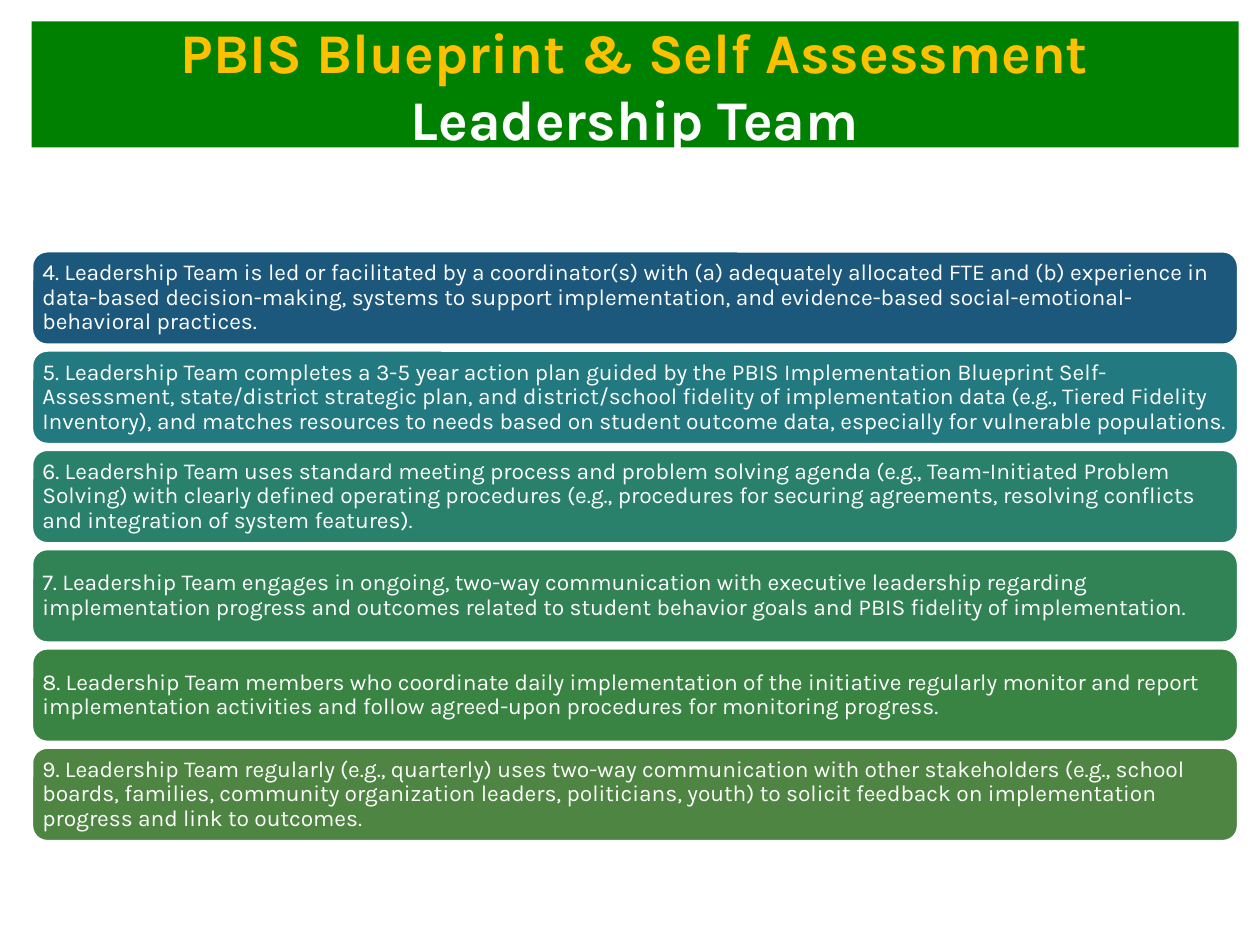
import pptx
import pptx.dml.color
import pptx.enum.shapes
import pptx.enum.text
import pptx.util

Inches, Pt = pptx.util.Inches, pptx.util.Pt
MIDDLE = pptx.enum.text.MSO_ANCHOR.MIDDLE
ALIGN = pptx.enum.text.PP_ALIGN

FONT = "Karla"
LEFT, WIDTH = 0.25, 9.58
FIRST_TOP, LAST_TOP, CARD_HEIGHT = 1.99, 5.93, 0.75

TITLE_LINES = [
    ("PBIS Blueprint & Self Assessment", "FFC000"),
    ("Leadership Team", "FFFFFF"),
]

CARDS = [
    ("1B587C", "4. Leadership Team is led or facilitated by a coordinator(s) with (a) adequately "
     "allocated FTE and (b) experience in data-based decision-making, systems to support "
     "implementation, and evidence-based social-emotional-behavioral practices."),
    ("22797F", "5. Leadership Team completes a 3-5 year action plan guided by the PBIS "
     "Implementation Blueprint Self-Assessment, state/district strategic plan, and "
     "district/school fidelity of implementation data (e.g., Tiered Fidelity Inventory), and "
     "matches resources to needs based on student outcome data, especially for vulnerable "
     "populations."),
    ("29816B", "6. Leadership Team uses standard meeting process and problem solving agenda "
     "(e.g., Team-Initiated Problem Solving) with clearly defined operating procedures (e.g., "
     "procedures for securing agreements, resolving conflicts and integration of system "
     "features)."),
    ("318355", "7. Leadership Team engages in ongoing, two-way communication with executive "
     "leadership regarding implementation progress and outcomes related to student behavior "
     "goals and PBIS fidelity of implementation."),
    ("398443", "8. Leadership Team members who coordinate daily implementation of the "
     "initiative regularly monitor and report implementation activities and follow agreed-upon "
     "procedures for monitoring progress."),
    ("4E8542", "9. Leadership Team regularly (e.g., quarterly) uses two-way communication with "
     "other stakeholders (e.g., school boards, families, community organization leaders, "
     "politicians, youth) to solicit feedback on implementation progress and link to outcomes."),
]


def rgb(value):
    return pptx.dml.color.RGBColor.from_string(value)


def set_fill(sp, color):
    sp.fill.solid()
    sp.fill.fore_color.rgb = rgb(color)


def add_run(p, text, size, color, bold=False):
    r = p.add_run()
    r.text = text
    r.font.name = FONT
    r.font.size = Pt(size)
    r.font.bold = bold
    r.font.color.rgb = rgb(color)


def fill_title(s):
    sp = s.shapes.title
    sp.left, sp.top = Inches(LEFT), Inches(0.17)
    sp.width, sp.height = Inches(WIDTH), Inches(1)
    set_fill(sp, "008000")
    tf = sp.text_frame
    tf.auto_size = pptx.enum.text.MSO_AUTO_SIZE.NONE
    tf.vertical_anchor = MIDDLE
    for i, (text, color) in enumerate(TITLE_LINES):
        p = tf.add_paragraph() if i else tf.paragraphs[0]
        p.alignment = ALIGN.CENTER
        p.space_before = Pt(0)
        add_run(p, text, 32, color, bold=True)


def add_card(s, top, color, text):
    sp = s.shapes.add_shape(
        pptx.enum.shapes.MSO_SHAPE.ROUNDED_RECTANGLE,
        Inches(LEFT), Inches(top), Inches(WIDTH), Inches(CARD_HEIGHT))
    sp.shadow.inherit = False
    set_fill(sp, color)
    sp.line.color.rgb = rgb("FFFFFF")
    sp.line.width = Pt(2)
    tf = sp.text_frame
    tf.word_wrap = True
    tf.vertical_anchor = MIDDLE
    tf.margin_left = tf.margin_right = Inches(0.05)
    tf.margin_top = tf.margin_bottom = Inches(0.05)
    p = tf.paragraphs[0]
    p.alignment = ALIGN.LEFT
    p.line_spacing = 0.9
    add_run(p, text, 13, "FFFFFF")


def main():
    prs = pptx.Presentation()
    prs.slide_width, prs.slide_height = Inches(10), Inches(7.5)
    s = prs.slides.add_slide(prs.slide_layouts.get_by_name("Title Only"))
    fill_title(s)
    pitch = (LAST_TOP - FIRST_TOP) / (len(CARDS) - 1)
    for row, (color, text) in enumerate(CARDS):
        add_card(s, FIRST_TOP + row * pitch, color, text)
    prs.save("out.pptx")


if __name__ == "__main__":
    main()
